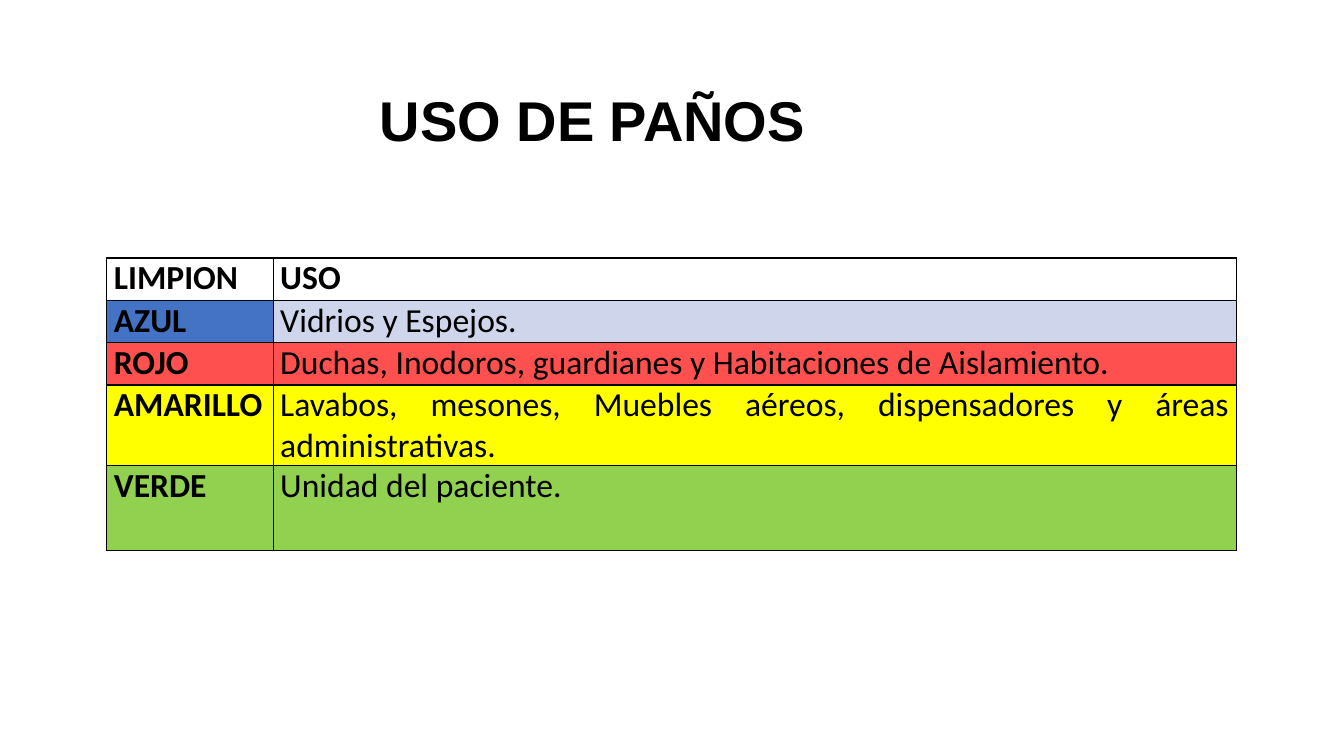
from lxml import etree
from pptx import Presentation
from pptx.dml.color import RGBColor as RGB
from pptx.enum.text import MSO_ANCHOR as Anchor, PP_ALIGN as Align
from pptx.oxml.ns import qn
from pptx.util import Inches, Pt

COLORS = {
    "black": "000000", "white": "FFFFFF", "blue": "4472C4", "pale": "CFD5EA",
    "red": "FF5050", "yellow": "FFFF00", "green": "92D050",
}
COLS = [1.65, 9.55]
# Label, use, label fill, use fill, row height
ROWS = [
    ("LIMPION", "USO", "white", "white", 0.42),
    ("AZUL", "Vidrios y Espejos.", "blue", "pale", 0.42),
    ("ROJO", "Duchas, Inodoros, guardianes y Habitaciones de Aislamiento.",
     "red", "red", 0.42),
    ("AMARILLO", "Lavabos, mesones, Muebles aéreos, dispensadores y áreas "
     "administrativas.", "yellow", "yellow", 0.74),
    ("VERDE", "Unidad del paciente.", "green", "green", 0.84),
]


def style(para, face, size, bold):
    for run in para.runs:
        font = run.font
        font.name, font.size, font.bold = face, Pt(size), bold
        font.color.rgb = RGB.from_string(COLORS["black"])


def add_title(slide, text):
    box = slide.shapes.add_textbox(
        Inches(3.67), Inches(0.17), Inches(5.99), Inches(1.4))
    frame = box.text_frame
    frame.word_wrap = True
    frame.vertical_anchor = Anchor.BOTTOM
    frame.text = text
    para = frame.paragraphs[0]
    para.line_spacing = 0.9
    style(para, "Arial", 40, True)


def add_edges(cell):
    # Borders come before the fill in the cell properties
    props = cell._tc.get_or_add_tcPr()
    for spot, side in enumerate(("lnL", "lnR", "lnT", "lnB")):
        line = etree.Element(qn(f"a:{side}"), w=str(Pt(1)))
        fill = etree.SubElement(line, qn("a:solidFill"))
        etree.SubElement(fill, qn("a:srgbClr"), val=COLORS["black"])
        props.insert(spot, line)


def fill_cell(cell, text, color, bold):
    cell.margin_left = cell.margin_right = Inches(0.07)
    cell.margin_top = cell.margin_bottom = 0
    cell.fill.solid()
    cell.fill.fore_color.rgb = RGB.from_string(COLORS[color])
    cell.text_frame.text = text
    para = cell.text_frame.paragraphs[0]
    para.alignment = Align.JUSTIFY
    style(para, "Calibri", 24, bold)
    add_edges(cell)


def add_grid(slide):
    high = sum(row[-1] for row in ROWS)
    table = slide.shapes.add_table(
        len(ROWS), len(COLS), Inches(1.06), Inches(2.56),
        Inches(sum(COLS)), Inches(high)).table
    for col, width in zip(table.columns, COLS):
        col.width = Inches(width)
    for r, (label, use, left, right, height) in enumerate(ROWS):
        table.rows[r].height = Inches(height)
        fill_cell(table.cell(r, 0), label, left, True)
        fill_cell(table.cell(r, 1), use, right, r == 0)


def main():
    deck = Presentation()
    deck.slide_width, deck.slide_height = Inches(13.33), Inches(7.5)
    slide = deck.slides.add_slide(deck.slide_layouts[6])
    add_title(slide, "USO DE PAÑOS")
    add_grid(slide)
    deck.save("out.pptx")


if __name__ == "__main__":
    main()
